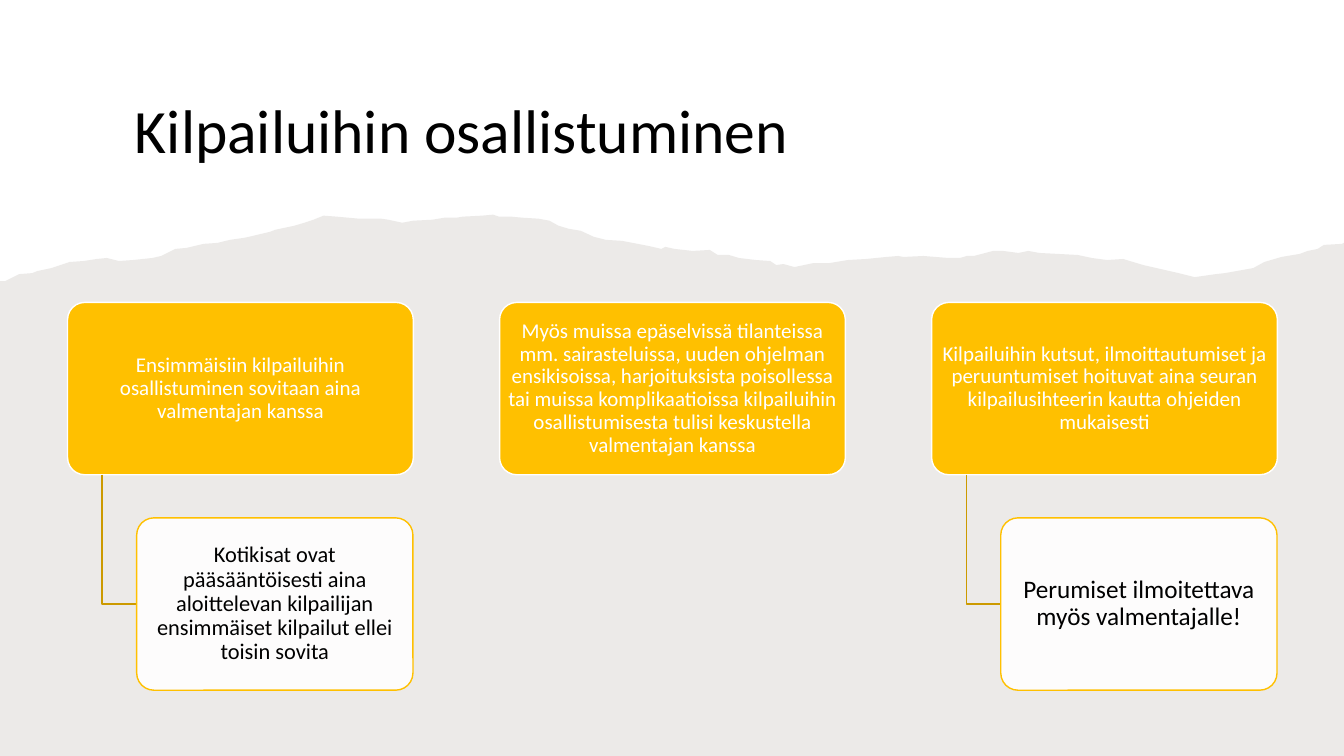
from lxml.etree import SubElement
from pptx import Presentation
from pptx.dml.color import RGBColor
from pptx.enum.shapes import MSO_SHAPE
from pptx.enum.text import MSO_ANCHOR, PP_ALIGN
from pptx.oxml.ns import qn
from pptx.util import Inches, Pt

# Content: each column has a main statement and an optional (detail, size)
TITLE = "Kilpailuihin osallistuminen"
COLUMNS = [
    ("Ensimmäisiin kilpailuihin osallistuminen sovitaan aina valmentajan kanssa",
     ("Kotikisat ovat pääsääntöisesti aina aloittelevan kilpailijan ensimmäiset "
      "kilpailut ellei toisin sovita", 16)),
    ("Myös muissa epäselvissä tilanteissa mm. sairasteluissa, uuden ohjelman ensikisoissa, "
     "harjoituksista poisollessa tai muissa komplikaatioissa kilpailuihin osallistumisesta "
     "tulisi keskustella valmentajan kanssa", None),
    ("Kilpailuihin kutsut, ilmoittautumiset ja peruuntumiset hoituvat aina seuran "
     "kilpailusihteerin kautta ohjeiden mukaisesti",
     ("Perumiset ilmoitettava myös valmentajalle!", 18)),
]

# Torn paper edge, left to right, in inches
TORN_EDGE = [
    (0, 2.79), (0.05, 2.79), (0.19, 2.72), (0.32, 2.71), (0.37, 2.69), (0.51, 2.66),
    (0.57, 2.64), (0.69, 2.6), (0.83, 2.59), (0.96, 2.57), (1.06, 2.56), (1.18, 2.59),
    (1.32, 2.58), (1.51, 2.56), (1.6, 2.54), (1.74, 2.47), (1.85, 2.46), (2.02, 2.42),
    (2.16, 2.41), (2.28, 2.38), (2.42, 2.36), (2.47, 2.35), (2.68, 2.3), (2.73, 2.28),
    (2.92, 2.24), (3.02, 2.21), (3.11, 2.18), (3.21, 2.14), (3.34, 2.15), (3.56, 2.17),
    (3.78, 2.17), (3.85, 2.18), (3.99, 2.21), (4.1, 2.19), (4.29, 2.18), (4.41, 2.16),
    (4.53, 2.16), (4.59, 2.15), (4.78, 2.14), (4.89, 2.13), (4.95, 2.15), (5.07, 2.15),
    (5.18, 2.16), (5.34, 2.17), (5.45, 2.19), (5.54, 2.24), (5.64, 2.27), (5.76, 2.29),
    (5.89, 2.35), (6.01, 2.38), (6.17, 2.39), (6.43, 2.44), (6.56, 2.47), (6.6, 2.45),
    (6.69, 2.47), (6.87, 2.49), (7.04, 2.48), (7.12, 2.53), (7.23, 2.53), (7.33, 2.56),
    (7.5, 2.58), (7.64, 2.59), (7.7, 2.63), (7.77, 2.62), (7.88, 2.65), (8.07, 2.61),
    (8.23, 2.61), (8.41, 2.58), (8.59, 2.57), (8.79, 2.55), (8.91, 2.54), (8.96, 2.55),
    (9.16, 2.54), (9.28, 2.55), (9.41, 2.56), (9.52, 2.56), (9.59, 2.54), (9.66, 2.54),
    (9.85, 2.49), (9.95, 2.49), (10.1, 2.51), (10.2, 2.49), (10.31, 2.51), (10.5, 2.52),
    (10.69, 2.53), (10.83, 2.56), (10.98, 2.58), (11.14, 2.57), (11.34, 2.63),
    (11.69, 2.71), (11.85, 2.75), (12.06, 2.72), (12.15, 2.71), (12.43, 2.66),
    (12.54, 2.6), (12.71, 2.55), (12.89, 2.52), (12.97, 2.49), (13.07, 2.47),
    (13.13, 2.43), (13.31, 2.42), (13.33, 2.41),
]

# Layout in inches
SLIDE_WIDTH, SLIDE_HEIGHT = 13.33, 7.5
LEFT, TOP, PITCH = 0.67, 3.0, 4.285
MAIN_WIDTH, DETAIL_WIDTH, BOX_HEIGHT = 3.43, 2.74, 1.71
DETAIL_TOP = TOP + BOX_HEIGHT * 1.25
STEP = MAIN_WIDTH / 10


def color(hex_value):
    return RGBColor.from_string(hex_value)


def set_fill(shape, hex_value, opacity=100):
    shape.fill.solid()
    shape.fill.fore_color.rgb = color(hex_value)
    if opacity < 100:
        color_element = shape.fill._xPr.find(qn("a:solidFill"))[0]
        SubElement(color_element, qn("a:alpha")).set("val", str(opacity * 1000))


def set_line(shape, hex_value):
    shape.line.color.rgb = color(hex_value)
    shape.line.width = Pt(1)


def set_text(shape, text, size, hex_value, alignment):
    frame = shape.text_frame
    frame.word_wrap = True
    frame.vertical_anchor = MSO_ANCHOR.MIDDLE
    frame.text = text
    paragraph = frame.paragraphs[0]
    paragraph.alignment = alignment
    paragraph.line_spacing = 0.9
    font = paragraph.runs[0].font
    font.name, font.size = "Calibri", Pt(size)
    font.color.rgb = color(hex_value)


def add_outline(slide, points, close):
    corners = [(Inches(x), Inches(y)) for x, y in points]
    builder = slide.shapes.build_freeform(*corners[0])
    builder.add_line_segments(corners[1:], close=close)
    shape = builder.convert_to_shape()
    shape.shadow.inherit = False
    return shape


def add_box(slide, left, top, width, text, size, text_color, fill, opacity, line):
    box = slide.shapes.add_shape(MSO_SHAPE.ROUNDED_RECTANGLE, Inches(left), Inches(top),
                                 Inches(width), Inches(BOX_HEIGHT))
    box.adjustments[0] = 0.1
    box.shadow.inherit = False
    set_fill(box, fill, opacity)
    set_line(box, line)
    frame = box.text_frame
    frame.margin_left = frame.margin_right = Inches(0.03)
    frame.margin_top = frame.margin_bottom = Inches(0.02)
    set_text(box, text, size, text_color, PP_ALIGN.CENTER)


def main():
    presentation = Presentation()
    presentation.slide_width = Inches(SLIDE_WIDTH)
    presentation.slide_height = Inches(SLIDE_HEIGHT)
    slide = presentation.slides.add_slide(presentation.slide_layouts[6])

    # Torn paper background
    paper = add_outline(
        slide, TORN_EDGE + [(SLIDE_WIDTH, SLIDE_HEIGHT), (0, SLIDE_HEIGHT)], True)
    set_fill(paper, "82766A", 15)
    paper.line.fill.background()

    # Title
    title = slide.shapes.add_textbox(Inches(1.24), Inches(0.81), Inches(10.87), Inches(1.04))
    set_text(title, TITLE, 44, "000000", PP_ALIGN.LEFT)

    # Columns: main box, elbow line and detail box
    for index, (statement, detail) in enumerate(COLUMNS):
        left = LEFT + index * PITCH
        add_box(slide, left, TOP, MAIN_WIDTH, statement, 15, "FFFFFF",
                "FFC000", 100, "FFFFFF")
        if detail:
            detail_text, detail_size = detail
            detail_left = left + 2 * STEP
            middle = DETAIL_TOP + BOX_HEIGHT / 2
            elbow = add_outline(slide, [(left + STEP, TOP + BOX_HEIGHT),
                                        (left + STEP, middle), (detail_left, middle)], False)
            elbow.fill.background()
            set_line(elbow, "CC9A00")
            add_box(slide, detail_left, DETAIL_TOP, DETAIL_WIDTH, detail_text, detail_size,
                    "000000", "FFFFFF", 90, "FFC000")

    presentation.save("out.pptx")


if __name__ == "__main__":
    main()
